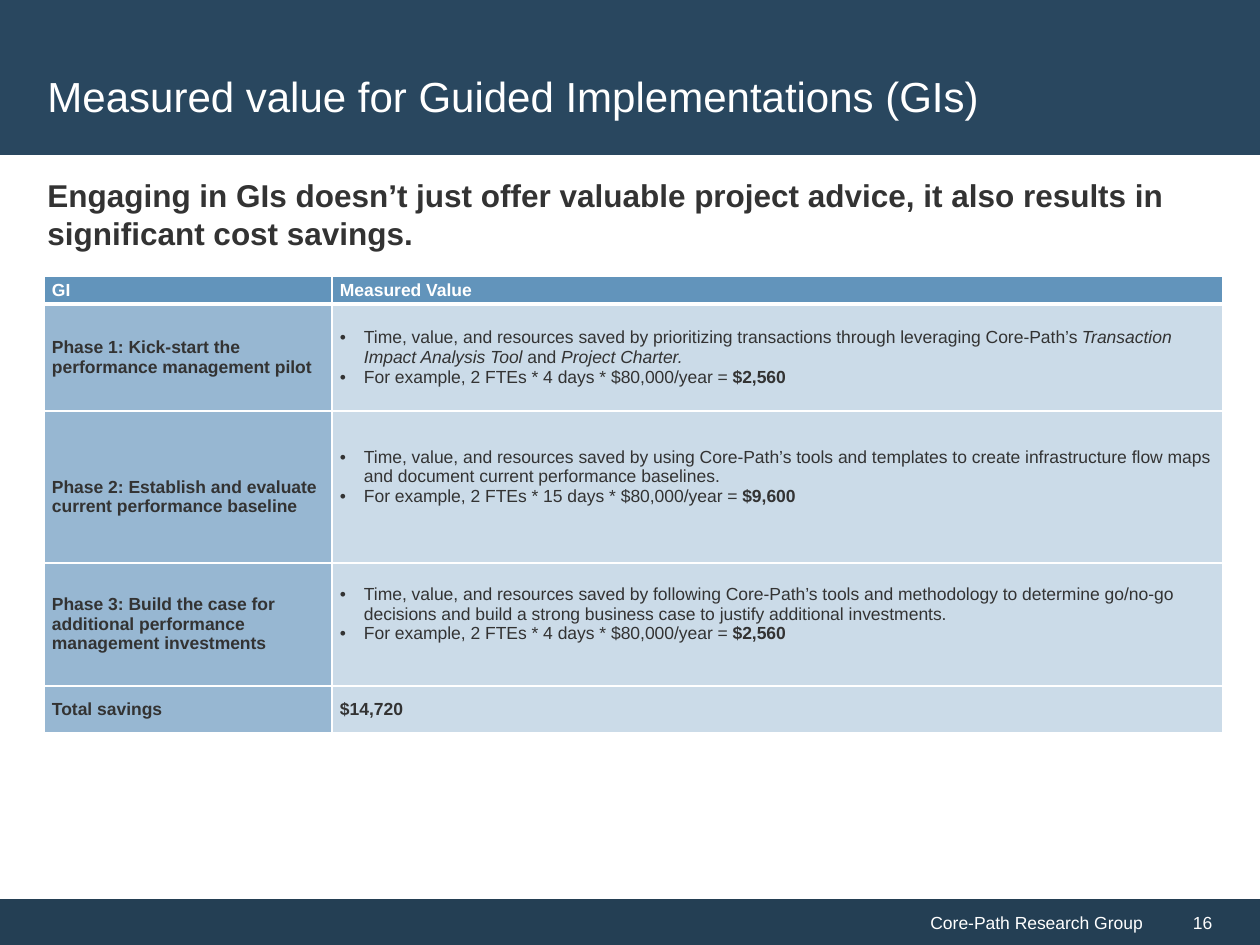
from lxml import etree
from pptx import Presentation
from pptx.dml.color import RGBColor
from pptx.enum.shapes import MSO_SHAPE
from pptx.enum.text import MSO_ANCHOR, PP_ALIGN
from pptx.oxml.ns import qn
from pptx.util import Emu, Pt

RECTANGLE = MSO_SHAPE.RECTANGLE
MIDDLE, TOP = MSO_ANCHOR.MIDDLE, MSO_ANCHOR.TOP
LEFT, RIGHT = PP_ALIGN.LEFT, PP_ALIGN.RIGHT

WHITE = RGBColor(0xFF, 0xFF, 0xFF)
TEXT = RGBColor(0x33, 0x33, 0x33)
BANNER = RGBColor(0x29, 0x47, 0x5F)
FOOTER = RGBColor(0x24, 0x3F, 0x54)
HEADER = RGBColor(0x62, 0x94, 0xBB)
PHASE = RGBColor(0x97, 0xB7, 0xD2)
VALUE = RGBColor(0xCB, 0xDB, 0xE8)

FONT = "Arial"
PLAIN, BOLD, ITALIC = "plain", "bold", "italic"
COLUMN_WIDTHS = (288, 891)
ROW_HEIGHTS = (28, 107, 152, 123, 47)
BULLET_INDENT = 24
CELL_MARGIN = 9
BLANK_LINE = 20

PHASES = (
    ("Phase 1: Kick-start the performance management pilot", 0, 0, (
        (("Time, value, and resources saved by prioritizing transactions through "
          "leveraging Core-Path’s ", PLAIN),
         ("Transaction Impact Analysis Tool ", ITALIC), ("and", PLAIN),
         (" Project Charter.", ITALIC)),
        (("For example, 2 FTEs * 4 days * $80,000/year = ", PLAIN), ("$2,560", BOLD)))),
    ("Phase 2: Establish and evaluate current performance baseline", BLANK_LINE, BLANK_LINE, (
        (("Time, value, and resources saved by using Core-Path’s tools and templates to create "
          "infrastructure flow maps and document current performance baselines.", PLAIN),),
        (("For example, 2 FTEs * 15 days * $80,000/year = ", PLAIN), ("$9,600", BOLD)))),
    ("Phase 3: Build the case for additional performance management investments", 0, BLANK_LINE, (
        (("Time, value, and resources saved by following Core-Path’s tools and methodology to "
          "determine go/no-go decisions and build a strong business case to justify additional "
          "investments.", PLAIN),),
        (("For example, 2 FTEs * 4 days * $80,000/year = ", PLAIN), ("$2,560", BOLD)))),
)


def px(length):
    """Turn a length in px into EMU."""
    return Emu(round(length * 914400 / 126))


def format_run(run, size, color, style=PLAIN):
    """Set the font of one run."""
    run.font.name, run.font.size = FONT, Pt(size)
    run.font.color.rgb = color
    run.font.bold, run.font.italic = style == BOLD, style == ITALIC


def write(frame, text, size, color, style=PLAIN, anchor=MIDDLE, alignment=LEFT):
    """Put one formatted paragraph into a text frame."""
    frame.text = text
    frame.word_wrap = True
    frame.vertical_anchor = anchor
    frame.paragraphs[0].alignment = alignment
    format_run(frame.paragraphs[0].runs[0], size, color, style)


def add_block(slide, box, color):
    """Add a plain filled rectangle."""
    block = slide.shapes.add_shape(RECTANGLE, *map(px, box))
    block.shadow.inherit = False
    block.fill.solid()
    block.fill.fore_color.rgb = color
    block.line.fill.background()
    return block


def add_banner(slide, left, top, width, height):
    """Add the title band with its title."""
    add_block(slide, (left, top, width, height), BANNER)
    title = slide.shapes.add_textbox(*map(px, (left + 35, top + 35, width - 72, height - 34)))
    write(title.text_frame, "Measured value for Guided Implementations (GIs)", 24, WHITE)


def add_statement(slide, left, top, width, height):
    """Add the key message under the banner."""
    statement = slide.shapes.add_textbox(*map(px, (left, top, width, height)))
    write(statement.text_frame, "Engaging in GIs doesn’t just offer valuable project advice, "
          "it also results in significant cost savings.", 18, TEXT, BOLD, TOP)


def add_footer(slide, left, top, width, height):
    """Add the footer band with the publisher and the page number."""
    number_width = 105
    name_width = width - number_width
    name = add_block(slide, (left, top, name_width, height), FOOTER)
    write(name.text_frame, "Core-Path Research Group", 10, WHITE, alignment=RIGHT)
    number = add_block(slide, (left + name_width, top, number_width, height), FOOTER)
    number.text_frame.margin_left = px(38)
    write(number.text_frame, "16", 10, WHITE)


def style_cell(cell, fill, top_line=1, bottom_line=1):
    """Set the fill, margins and white borders of a cell."""
    cell.margin_left = cell.margin_right = px(CELL_MARGIN - 1)
    cell.margin_top = cell.margin_bottom = 0
    cell.vertical_anchor = MIDDLE
    cell.fill.solid()
    cell.fill.fore_color.rgb = fill
    properties = cell._tc.get_or_add_tcPr()
    sides = (("a:lnL", 1), ("a:lnR", 1), ("a:lnT", top_line), ("a:lnB", bottom_line))
    for position, (tag, points) in enumerate(sides):
        line = etree.Element(qn(tag), w=str(Pt(points)))
        solid = etree.SubElement(line, qn("a:solidFill"))
        etree.SubElement(solid, qn("a:srgbClr"), val=str(WHITE))
        properties.insert(position, line)


def write_bullets(frame, bullets):
    """Fill a text frame with bulleted paragraphs of mixed runs."""
    for index, parts in enumerate(bullets):
        paragraph = frame.paragraphs[0] if index == 0 else frame.add_paragraph()
        properties = paragraph._p.get_or_add_pPr()
        properties.set("marL", str(px(BULLET_INDENT)))
        properties.set("indent", str(-px(BULLET_INDENT)))
        etree.SubElement(properties, qn("a:buFont"), typeface=FONT)
        etree.SubElement(properties, qn("a:buChar"), char="•")
        for text, style in parts:
            run = paragraph.add_run()
            run.text = text
            format_run(run, 10, TEXT, style)


def add_savings_table(slide, left, top):
    """Add the table of measured value by phase."""
    box = (left, top, sum(COLUMN_WIDTHS), sum(ROW_HEIGHTS))
    table = slide.shapes.add_table(len(ROW_HEIGHTS), len(COLUMN_WIDTHS), *map(px, box)).table
    for column, width in zip(table.columns, COLUMN_WIDTHS):
        column.width = px(width)
    for row, height in zip(table.rows, ROW_HEIGHTS):
        row.height = px(height)

    for cell, text in zip(table.rows[0].cells, ("GI", "Measured Value")):
        style_cell(cell, HEADER, bottom_line=3)
        write(cell.text_frame, text, 10, WHITE, BOLD)
    for row, (phase, space_above, space_below, bullets) in enumerate(PHASES, 1):
        label, value = table.rows[row].cells
        top_line = 3 if row == 1 else 1
        style_cell(label, PHASE, top_line)
        style_cell(value, VALUE, top_line)
        write(label.text_frame, phase, 10, TEXT, BOLD)
        write_bullets(value.text_frame, bullets)
        label.margin_top = px(space_above)
        value.margin_bottom = px(space_below)
    totals = zip(table.rows[len(ROW_HEIGHTS) - 1].cells,
                 ("Total savings", "$14,720"), (PHASE, VALUE))
    for cell, text, fill in totals:
        style_cell(cell, fill)
        write(cell.text_frame, text, 10, TEXT, BOLD)


def main():
    """Build the slide and save it."""
    presentation = Presentation()
    presentation.slide_width, presentation.slide_height = px(1260), px(945)
    slide = presentation.slides.add_slide(presentation.slide_layouts[6])
    add_footer(slide, 0, 899, 1260, 46)
    add_banner(slide, 0, 0, 1260, 155)
    add_statement(slide, 35, 170, 1188, 91)
    add_savings_table(slide, 44, 276)
    presentation.save("out.pptx")


if __name__ == "__main__":
    main()
